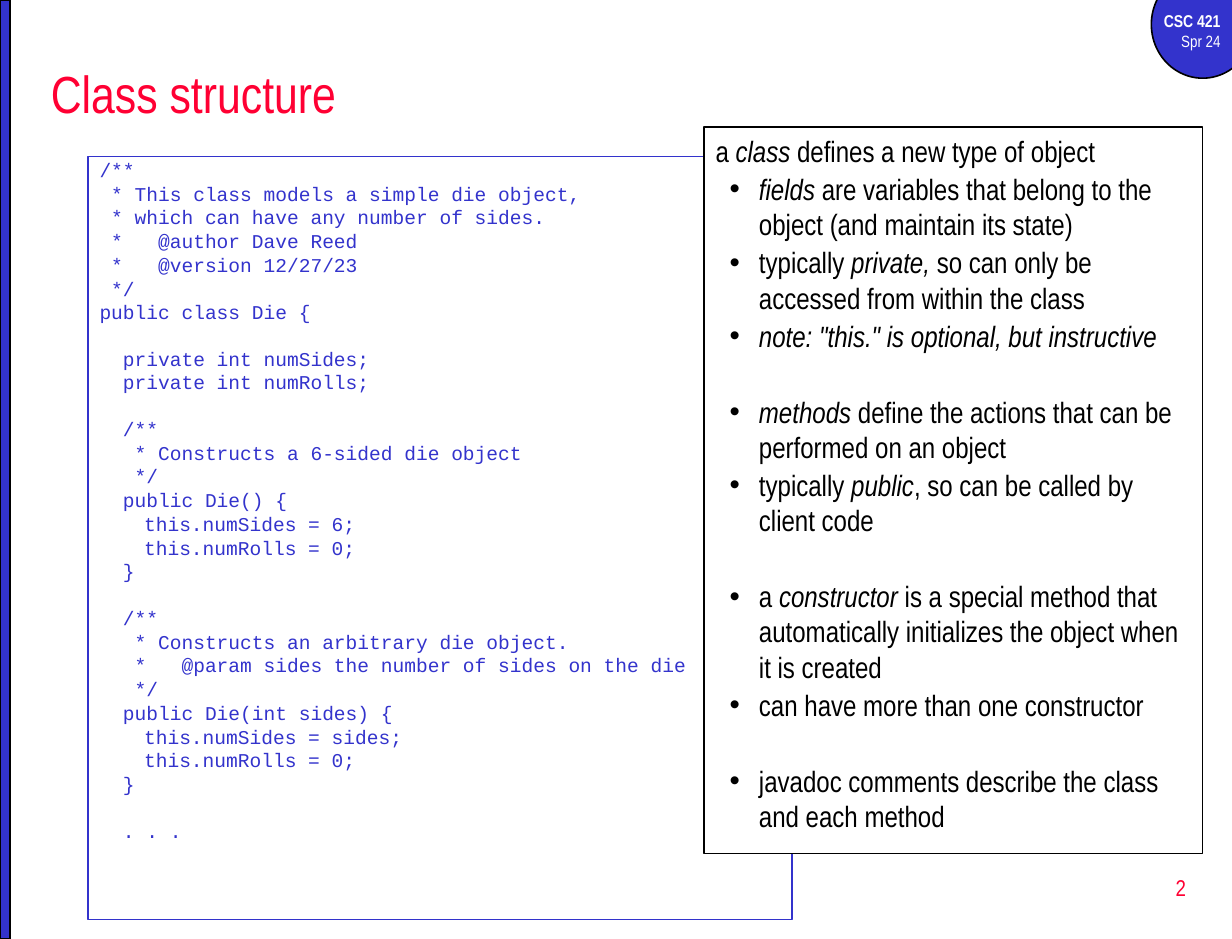
from dataclasses import dataclass
from typing import Optional

from lxml import etree
from pptx import Presentation
from pptx.dml.color import RGBColor
from pptx.enum.shapes import MSO_SHAPE
from pptx.enum.text import MSO_ANCHOR, MSO_AUTO_SIZE, PP_ALIGN
from pptx.oxml.ns import qn
from pptx.util import Inches, Pt

RECT, OVAL = MSO_SHAPE.RECTANGLE, MSO_SHAPE.OVAL
TOP, MIDDLE = MSO_ANCHOR.TOP, MSO_ANCHOR.MIDDLE
LEFT, RIGHT = PP_ALIGN.LEFT, PP_ALIGN.RIGHT
FIXED = MSO_AUTO_SIZE.NONE

BLUE = RGBColor(0x33, 0x33, 0xCC)
RED = RGBColor(0xFF, 0x00, 0x33)
BLACK = RGBColor(0, 0, 0)
WHITE = RGBColor(0xFF, 0xFF, 0xFF)

SANS, MONO = "Arial Narrow", "Courier New"
CELL = Inches(1 / 12)  # the slide is a grid of 126 columns by 96 rows
COLS, ROWS = 126, 96


@dataclass
class Box:
    col: float
    row: float
    cols: float
    rows: float

    def emu(self) -> list[int]:
        return [round(n * CELL) for n in (self.col, self.row, self.cols, self.rows)]


@dataclass
class Font:
    name: str
    size: float
    color: RGBColor


@dataclass
class Note:
    """Runs alternate plain and italic, starting with plain."""
    runs: tuple[str, ...]
    bullet: bool = True
    new_group: bool = False


CODE = """/**
 * This class models a simple die object,
 * which can have any number of sides.
 *   @author Dave Reed
 *   @version 12/27/23
 */
public class Die {

  private int numSides;
  private int numRolls;

  /**
   * Constructs a 6-sided die object
   */
  public Die() {
    this.numSides = 6;
    this.numRolls = 0;
  }

  /**
   * Constructs an arbitrary die object.
   *   @param sides the number of sides on the die
   */
  public Die(int sides) {
    this.numSides = sides;
    this.numRolls = 0;
  }

  . . ."""

NOTES = [
    Note(("a ", "class", " defines a new type of object"), bullet=False),
    Note(("", "fields", " are variables that belong to the object (and maintain its state)")),
    Note(("typically ", "private, ", "so can only be accessed from within the class")),
    Note(("", 'note: "this." is optional, but instructive')),
    Note(("", "methods", " define the actions that can be performed on an object"), new_group=True),
    Note(("typically ", "public", ", so can be called by client code")),
    Note(("a ", "constructor", " is a special method that automatically initializes "
          "the object when it is created"), new_group=True),
    Note(("can have more than one constructor",)),
    Note(("javadoc comments describe the class and each method",), new_group=True),
]


def add_run(p, text: str, font: Font, bold: bool = False, italic: bool = False) -> None:
    r = p.add_run()
    r.text = text
    r.font.name, r.font.size = font.name, Pt(font.size)
    r.font.color.rgb = font.color
    r.font.bold, r.font.italic = bold, italic


def set_frame(tf, anchor=TOP) -> None:
    tf.word_wrap = True
    tf.auto_size = FIXED
    tf.vertical_anchor = anchor


def next_paragraph(tf, first: bool, align=LEFT):
    p = tf.paragraphs[0] if first else tf.add_paragraph()
    p.alignment = align
    return p


def set_indent(p, margin: float, first_line: float, bullet: str = "") -> None:
    pPr = p._p.get_or_add_pPr()
    pPr.set("marL", str(Inches(margin)))
    pPr.set("indent", str(Inches(first_line)))
    if bullet:
        etree.SubElement(pPr, qn("a:buFont")).set("typeface", "Arial")
        etree.SubElement(pPr, qn("a:buChar")).set("char", bullet)


def add_panel(slide, kind, box: Box, fill: Optional[RGBColor], line: RGBColor, width: float):
    sp = slide.shapes.add_shape(kind, *box.emu())
    sp.shadow.inherit = False
    if fill is None:
        sp.fill.background()
    else:
        sp.fill.solid()
        sp.fill.fore_color.rgb = fill
    sp.line.color.rgb = line
    sp.line.width = Pt(width)
    set_frame(sp.text_frame)
    return sp


def add_label(slide, box: Box, lines: list[tuple[str, Font, bool]], anchor=TOP) -> None:
    tf = slide.shapes.add_textbox(*box.emu()).text_frame
    set_frame(tf, anchor)
    for i, (text, font, bold) in enumerate(lines):
        add_run(next_paragraph(tf, i == 0, RIGHT), text, font, bold)


def write_code(tf, font: Font) -> None:
    """Blank source lines become paragraph spacing; statements hang on the margin."""
    space, pitch = 3.05, 13.92
    gap = space
    for i, line in enumerate(CODE.splitlines()):
        if not line:
            gap += pitch
            continue
        p = next_paragraph(tf, i == 0)
        p.line_spacing, p.space_before = 0.8, Pt(gap)
        nested = line.startswith("    ")
        set_indent(p, 0.38, 0 if nested else -0.38)
        add_run(p, line.strip() if nested else line, font)
        gap = space


def write_notes(tf, font: Font) -> None:
    for i, note in enumerate(NOTES):
        p = next_paragraph(tf, i == 0)
        p.space_before = Pt(25 if note.new_group else 1.8)
        if note.bullet:
            p.level = 1
            set_indent(p, 0.37, -0.25, "•")
        for j, text in enumerate(note.runs):
            if text:
                add_run(p, text, font, italic=j % 2 == 1)


def main() -> None:
    prs = Presentation()
    prs.slide_width, prs.slide_height = COLS * CELL, ROWS * CELL
    slide = prs.slides.add_slide(prs.slide_layouts[5])

    add_panel(slide, OVAL, Box(117.75, -3, 10.5, 11), BLUE, BLACK, 1)
    add_label(slide, Box(116, 0.5, 10, 5.5), [
        ("CSC 421", Font(SANS, 10.5, WHITE), True),
        ("Spr 24", Font(SANS, 10, WHITE), False),
    ])
    add_panel(slide, RECT, Box(0, 0, 1, ROWS), BLUE, BLACK, 1)
    add_label(slide, Box(96.25, 87.5, 26.25, 6.35),
              [("2", Font(SANS, 14, RED), False)], MIDDLE)

    title = slide.shapes.title
    title.left, title.top, title.width, title.height = Box(4, 5, 119, 9).emu()
    set_frame(title.text_frame, MIDDLE)
    add_run(next_paragraph(title.text_frame, True), "Class structure", Font(SANS, 32, RED))

    code = add_panel(slide, RECT, Box(9, 16, 72, 78), None, BLUE, 0.75)
    write_code(code.text_frame, Font(MONO, 12, BLUE))
    notes = add_panel(slide, RECT, Box(72, 13, 51, 74.25), WHITE, BLACK, 1)
    write_notes(notes.text_frame, Font(SANS, 18, BLACK))

    prs.save("out.pptx")


if __name__ == "__main__":
    main()
